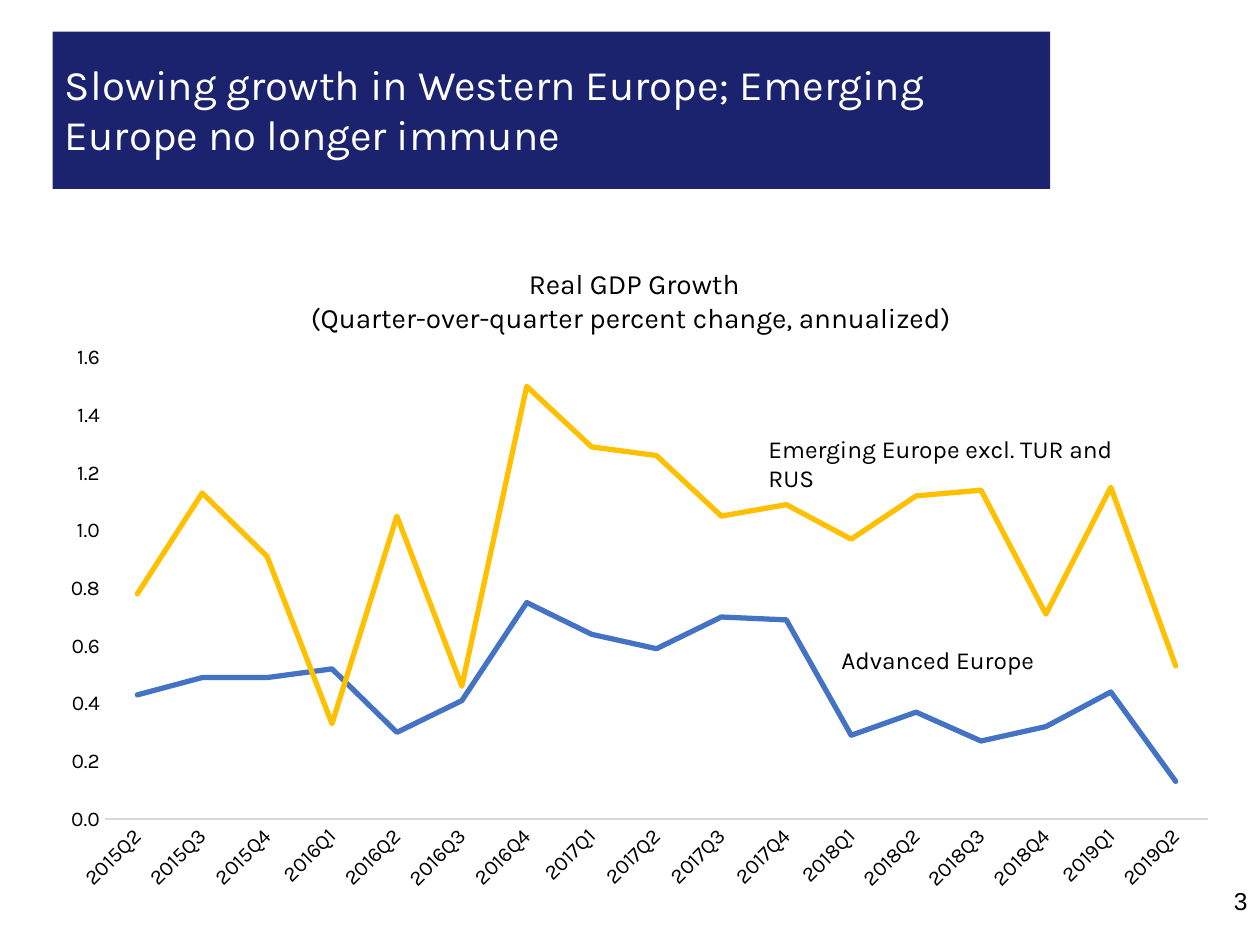
"""Build the slide on real GDP growth in Western and Emerging Europe."""
from lxml import etree
from pptx import Presentation
from pptx.chart.data import CategoryChartData
from pptx.dml.color import RGBColor
from pptx.enum.chart import XL_CHART_TYPE, XL_MARKER_STYLE, XL_TICK_MARK
from pptx.enum.shapes import MSO_SHAPE
from pptx.enum.text import PP_ALIGN
from pptx.oxml.ns import qn
from pptx.util import Cm, Pt

LINE_CHART = XL_CHART_TYPE.LINE
NO_MARKER = XL_MARKER_STYLE.NONE
NO_TICK = XL_TICK_MARK.NONE
RECTANGLE = MSO_SHAPE.RECTANGLE
LEFT, CENTER, RIGHT = PP_ALIGN.LEFT, PP_ALIGN.CENTER, PP_ALIGN.RIGHT

NAVY = RGBColor(0x1B, 0x23, 0x6F)
BLUE = RGBColor(0x44, 0x72, 0xC4)
GOLD = RGBColor(0xFF, 0xC0, 0x00)
GREY = RGBColor(0xD9, 0xD9, 0xD9)
BLACK = RGBColor(0x00, 0x00, 0x00)
WHITE = RGBColor(0xFF, 0xFF, 0xFF)

prs = Presentation()
prs.slide_width, prs.slide_height = Cm(25.4), Cm(19.05)
slide = prs.slides.add_slide(prs.slide_layouts[6])

banner = slide.shapes.add_shape(RECTANGLE, Cm(1.06), Cm(0.64), Cm(20.11), Cm(3.17))
banner.shadow.inherit = False
banner.fill.solid()
banner.fill.fore_color.rgb = NAVY
banner.line.fill.background()

quarters = [f"{year}Q{quarter}" for year in range(2015, 2020) for quarter in range(1, 5)][1:18]
growth = {
    "Advanced Europe": (
        BLUE,
        [0.43, 0.49, 0.49, 0.52, 0.3, 0.41, 0.75, 0.64, 0.59,
         0.7, 0.69, 0.29, 0.37, 0.27, 0.32, 0.44, 0.13],
    ),
    "Emerging Europe excl. TUR and RUS": (
        GOLD,
        [0.78, 1.13, 0.91, 0.33, 1.05, 0.46, 1.5, 1.29, 1.26,
         1.05, 1.09, 0.97, 1.12, 1.14, 0.71, 1.15, 0.53],
    ),
}
growth_data = CategoryChartData(number_format="0.00")
growth_data.categories = quarters
for region, (color, rates) in growth.items():
    growth_data.add_series(region, rates)

chart = slide.shapes.add_chart(
    LINE_CHART, Cm(0.43), Cm(4.78), Cm(24.77), Cm(13.64), growth_data
).chart
chart.has_legend = False
chart.has_title = False
chart.font.name = "Karla"
chart.font.size = Pt(12)
chart.font.color.rgb = BLACK
chart.plots[0].vary_by_categories = False

for series, (color, rates) in zip(chart.plots[0].series, growth.values()):
    series.smooth = False
    series.marker.format.type = None
    series.marker.style = NO_MARKER
    series.format.line.color.rgb = color
    series.format.line.width = Pt(3)
    series.format.line._get_or_add_ln().set("cap", "rnd")

quarter_axis, rate_axis = chart.category_axis, chart.value_axis
axis_format = {
    "has_major_gridlines": False,
    "major_tick_mark": NO_TICK,
    "minor_tick_mark": NO_TICK,
}
for axis in (quarter_axis, rate_axis):
    for attribute, value in axis_format.items():
        setattr(axis, attribute, value)
    for attribute, value in {"name": "Karla", "size": Pt(12)}.items():
        setattr(axis.tick_labels.font, attribute, value)
    axis.tick_labels.font.color.rgb = BLACK
quarter_axis.format.line.color.rgb = GREY
quarter_axis.format.line.width = Pt(0.75)
quarter_axis._element.find(qn("c:txPr")).find(qn("a:bodyPr")).set("rot", "-2700000")
rate_axis.format.line.fill.background()
rate_axis.tick_labels.number_format = "0.0"
rate_axis.tick_labels.number_format_is_linked = False
for attribute, value in {"minimum_scale": 0, "maximum_scale": 1.6, "major_unit": 0.2}.items():
    setattr(rate_axis, attribute, value)

plot_area = chart._chartSpace.chart.plotArea
for old_layout in plot_area.findall(qn("c:layout")):
    plot_area.remove(old_layout)
plot_layout = etree.Element(qn("c:layout"))
plot_area.insert(0, plot_layout)
manual_layout = etree.SubElement(plot_layout, qn("c:manualLayout"))
placement = {
    "layoutTarget": "inner", "xMode": "edge", "yMode": "edge",
    "x": 0.068, "y": 0.178, "w": 0.898, "h": 0.682,
}
for tag, value in placement.items():
    etree.SubElement(manual_layout, qn(f"c:{tag}")).set("val", str(value))

INSETS = (0.25, 0.13, 0.25, 0.13)
texts = [
    (["3"], (19.48, 17.73, 5.92, 1.32), "Arial", 14, BLACK, RIGHT, True, INSETS),
    (["Real GDP Growth", "(Quarter-over-quarter percent change, annualized) "],
     (2.97, 5.28, 19.48, 0.89), "Karla", 16, BLACK, CENTER, True, (0.15, 0.1, 0, 0)),
    (["Slowing growth in Western Europe; Emerging Europe no longer immune"],
     (1.06, 1.04, 20.11, 2.31), "Karla", 24, WHITE, LEFT, True, INSETS),
    (["Emerging Europe excl. TUR and RUS"],
     (15.24, 8.61, 8.46, 1.27), "Karla", 14, BLACK, LEFT, False, INSETS),
    (["Advanced Europe"],
     (16.71, 12.88, 4.72, 1.27), "Karla", 14, BLACK, LEFT, False, INSETS),
]
for lines, place, font_name, size, color, alignment, wrap, insets in texts:
    frame = slide.shapes.add_textbox(*map(Cm, place)).text_frame
    frame.word_wrap = wrap
    for side, inset in zip(("left", "top", "right", "bottom"), insets):
        setattr(frame, f"margin_{side}", Cm(inset))
    frame.text = "\n".join(lines)
    for paragraph in frame.paragraphs:
        paragraph.alignment = alignment
        for attribute, value in {"name": font_name, "size": Pt(size)}.items():
            setattr(paragraph.runs[0].font, attribute, value)
        paragraph.runs[0].font.color.rgb = color

prs.save("out.pptx")
